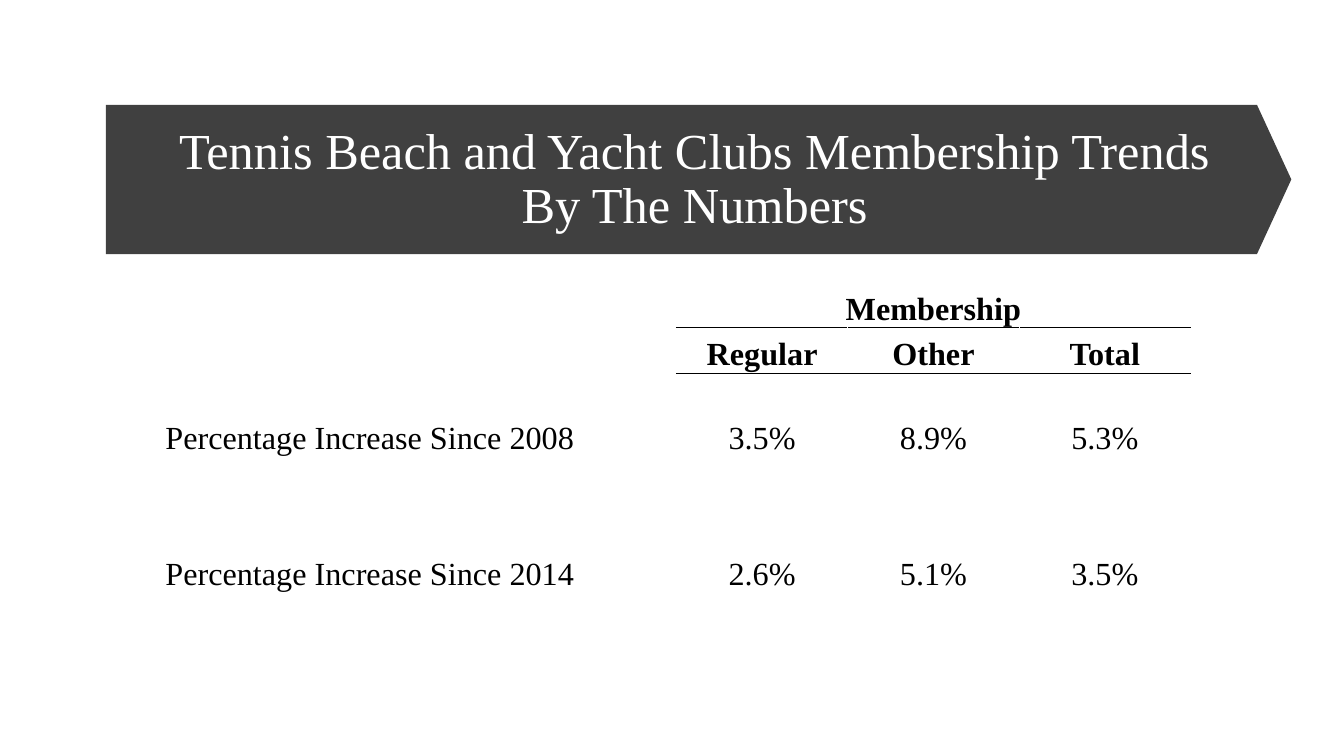
import lxml.etree
import pptx
import pptx.dml.color
import pptx.enum.shapes
import pptx.enum.text
import pptx.oxml.ns
import pptx.util

SLIDE_WIDTH = pptx.util.Inches(13.33)
SLIDE_HEIGHT = pptx.util.Inches(7.5)
ALIGN = pptx.enum.text.PP_ALIGN
ANCHOR = pptx.enum.text.MSO_ANCHOR
COLUMN_SHARES = [30.76, 7.35] + [12.75] * 3
ROW_SHARES = [6, 6, 11.07, 6.93, 11.07]
FIRST_FIGURE = 2
RULES = {0: ["lnB"], 1: ["lnT", "lnB"], 2: ["lnT"]}
MEMBERSHIP = [
    ["", "", "Membership", "", ""],
    ["", "", "Regular", "Other", "Total"],
    ["Percentage Increase Since 2008", "", "3.5%", "8.9%", "5.3%"],
    ["", "", "", "", ""],
    ["Percentage Increase Since 2014", "", "2.6%", "5.1%", "3.5%"],
]


def across(percent):
    """Length as a percentage of the slide's width."""
    return round(SLIDE_WIDTH * percent / 100)


def down(percent):
    """Length as a percentage of the slide's height."""
    return round(SLIDE_HEIGHT * percent / 100)


def area(left, top, width, height):
    return across(left), down(top), across(width), down(height)


def color(hex_string):
    return pptx.dml.color.RGBColor.from_string(hex_string)


def write(frame, text, size=23, ink="000000", bold=False, align=ALIGN.CENTER, spacing=1.0):
    paragraph = frame.paragraphs[0]
    paragraph.text = text
    paragraph.alignment = align
    paragraph.line_spacing = spacing
    for run in paragraph.runs:
        run.font.name = "Times New Roman"
        run.font.size = pptx.util.Pt(size)
        run.font.bold = bold
        run.font.color.rgb = color(ink)


def add_banner(slide):
    banner = slide.shapes.add_shape(
        pptx.enum.shapes.MSO_SHAPE.PENTAGON, *area(7.88, 13.87, 88.2, 19.73))
    banner.adjustments[0] = 0.23
    banner.shadow.inherit = False
    banner.fill.solid()
    banner.fill.fore_color.rgb = color("404040")
    banner.line.fill.background()
    title = slide.shapes.title
    title.element.addprevious(banner.element)


def set_title(slide, text):
    title = slide.shapes.title
    title.left, title.top, title.width, title.height = area(10.58, 17.6, 82.22, 12.53)
    title.text_frame.word_wrap = True
    title.text_frame.auto_size = pptx.enum.text.MSO_AUTO_SIZE.NONE
    title.text_frame.vertical_anchor = ANCHOR.MIDDLE
    write(title.text_frame, text, size=36, ink="FFFFFF", spacing=0.9)


def rule_cell(cell, side):
    """Draw a thin black rule; call for the top before the bottom."""
    qn = pptx.oxml.ns.qn
    border = lxml.etree.SubElement(
        cell._tc.get_or_add_tcPr(), qn(f"a:{side}"), w=str(pptx.util.Pt(0.5)))
    fill = lxml.etree.SubElement(border, qn("a:solidFill"))
    lxml.etree.SubElement(fill, qn("a:srgbClr"), val="000000")


def fill_cell(cell, text, row, column):
    cell.margin_left = cell.margin_right = cell.margin_top = pptx.util.Inches(0.01)
    cell.margin_bottom = 0
    cell.vertical_anchor = ANCHOR.BOTTOM
    is_figure = column >= FIRST_FIGURE
    if is_figure:
        for side in RULES.get(row, []):
            rule_cell(cell, side)
    cell.fill.background()
    if text:
        write(cell.text_frame, text, bold=row < 2,
              align=ALIGN.CENTER if is_figure else ALIGN.LEFT)


def add_membership_table(slide):
    frame = slide.shapes.add_table(
        len(ROW_SHARES), len(COLUMN_SHARES),
        *area(12.23, 37.33, sum(COLUMN_SHARES), sum(ROW_SHARES)))
    table = frame.table
    table.first_row = table.horz_banding = False
    for column, share in zip(table.columns, COLUMN_SHARES):
        column.width = across(share)
    for row, share in zip(table.rows, ROW_SHARES):
        row.height = down(share)
    table.cell(0, FIRST_FIGURE).merge(table.cell(0, len(COLUMN_SHARES) - 1))
    for row, texts in enumerate(MEMBERSHIP):
        for column, text in enumerate(texts):
            fill_cell(table.cell(row, column), text, row, column)


def main():
    deck = pptx.Presentation()
    deck.slide_width, deck.slide_height = SLIDE_WIDTH, SLIDE_HEIGHT
    slide = deck.slides.add_slide(deck.slide_layouts[5])
    add_banner(slide)
    set_title(slide, "Tennis Beach and Yacht Clubs Membership Trends\vBy The Numbers")
    add_membership_table(slide)
    deck.save("out.pptx")


if __name__ == "__main__":
    main()
